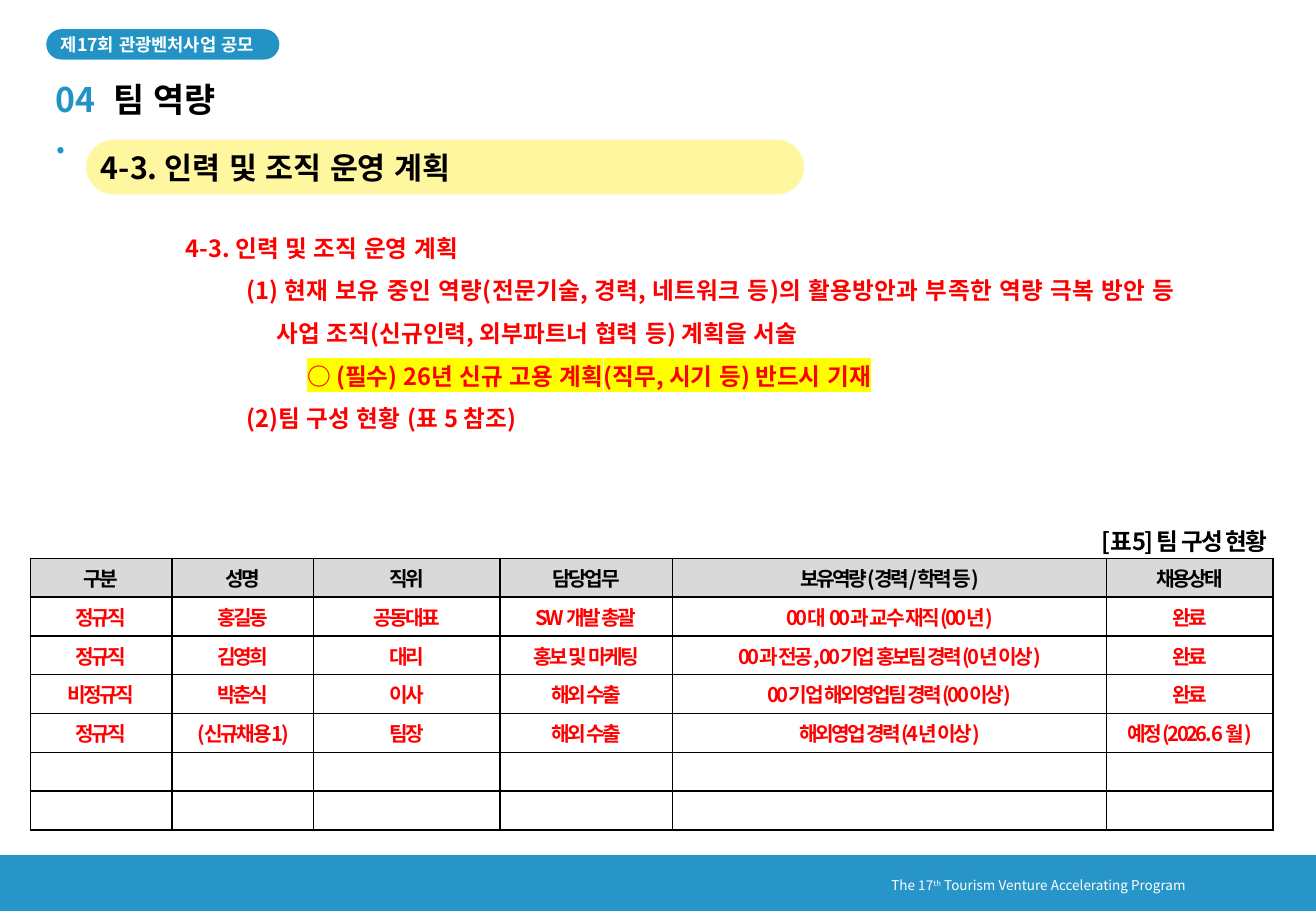
from lxml.etree import SubElement
from pptx import Presentation
from pptx.dml.color import RGBColor
from pptx.enum.lang import MSO_LANGUAGE_ID
from pptx.enum.shapes import MSO_SHAPE
from pptx.enum.text import MSO_ANCHOR, PP_ALIGN
from pptx.oxml.ns import qn
from pptx.util import Pt

FONT = "Noto Sans CJK KR"
BLUE, FOOTER_BLUE, PALE_YELLOW = "2393C5", "2795C7", "FFF7A0"
RED, BLACK, WHITE, GREY, YELLOW = "FF0000", "000000", "FFFFFF", "D9D9D9", "FFFF00"

PLAN = [
    (0, "4-3. 인력 및 조직 운영 계획", None),
    (1, "(1) 현재 보유 중인 역량(전문기술, 경력, 네트워크 등)의 활용방안과 부족한 역량 극복 방안 등 "
        "사업 조직(신규인력, 외부파트너 협력 등) 계획을 서술", None),
    (2, "○ (필수) 26년 신규 고용 계획(직무, 시기 등) 반드시 기재", YELLOW),
    (1, "(2)팀 구성 현황 (표 5 참조)", None),
]
COLUMN_WIDTHS = [84, 84, 110.5, 102, 257.5, 98.5]
TEAM = [
    ["구분", "성명", "직위", "담당업무", "보유역량(경력/학력 등)", "채용상태"],
    ["정규직", "홍길동", "공동대표", "SW 개발 총괄", "00대 00과 교수 재직(00년)", "완료"],
    ["정규직", "김영희", "대리", "홍보 및 마케팅", "00과 전공, 00기업 홍보팀 경력(0년 이상)", "완료"],
    ["비정규직", "박춘식", "이사", "해외 수출", "00기업 해외영업팀 경력(00이상)", "완료"],
    ["정규직", "(신규채용1)", "팀장", "해외 수출", "해외영업 경력(4년 이상)", "예정(2026. 6 월)"],
    [""] * 6,
    [""] * 6,
]


def color(value):
    return RGBColor.from_string(value)


def format_run(run, size, fill, bold=True, spacing=0, highlight=None):
    font = run.font
    font.size, font.bold, font.name = Pt(size), bold, FONT
    font.color.rgb = color(fill)
    font.language_id = MSO_LANGUAGE_ID.KOREAN
    properties = run._r.get_or_add_rPr()
    latin = properties.find(qn("a:latin"))
    east_asian = SubElement(properties, qn("a:ea"), typeface=FONT)
    latin.addnext(east_asian)
    if spacing:
        properties.set("spc", str(round(spacing * 100)))
    if highlight:
        mark = SubElement(properties, qn("a:highlight"))
        SubElement(mark, qn("a:srgbClr"), val=highlight)
        latin.addprevious(mark)


def set_margins(text_frame, left=0, right=0):
    text_frame.margin_left, text_frame.margin_right = Pt(left), Pt(right)
    text_frame.margin_top = text_frame.margin_bottom = 0


def add_text(slide, box, text, size, fill, align=PP_ALIGN.LEFT, inset=True, **style):
    text_frame = slide.shapes.add_textbox(*map(Pt, box)).text_frame
    text_frame.word_wrap = True
    if not inset:
        set_margins(text_frame)
    paragraph = text_frame.paragraphs[0]
    paragraph.text = text
    paragraph.alignment = align
    for run in paragraph.runs:
        format_run(run, size, fill, **style)
    return paragraph


def add_block(slide, kind, box, fill):
    shape = slide.shapes.add_shape(kind, *map(Pt, box))
    shape.shadow.inherit = False
    shape.fill.solid()
    shape.fill.fore_color.rgb = color(fill)
    shape.line.fill.background()
    return shape


def add_pill(slide, box, fill, text, size, text_color, align, left=0, right=0):
    shape = add_block(slide, MSO_SHAPE.ROUNDED_RECTANGLE, box, fill)
    shape.adjustments[0] = 0.5
    text_frame = shape.text_frame
    text_frame.word_wrap = True
    text_frame.vertical_anchor = MSO_ANCHOR.MIDDLE
    set_margins(text_frame, left, right)
    paragraph = text_frame.paragraphs[0]
    paragraph.text = text
    paragraph.alignment = align
    format_run(paragraph.runs[0], size, text_color)


def add_footer(slide, left, top, width, height):
    add_block(slide, MSO_SHAPE.RECTANGLE, (left, top, width, height), FOOTER_BLUE)
    paragraph = add_text(slide, (left + 521.3, top + 9.3, 224, 17.3), "The 17", 8, WHITE, bold=False)
    for text in ("th", " Tourism Venture Accelerating Program"):
        run = paragraph.add_run()
        run.text = text
        format_run(run, 8, WHITE, bold=False)
    paragraph.runs[1]._r.get_or_add_rPr().set("baseline", "30000")


def add_header(slide, left, top):
    add_pill(slide, (left, top, 138.2, 18), BLUE, "제17회 관광벤처사업 공모", 10.5, WHITE,
             PP_ALIGN.CENTER, right=6.5)
    add_text(slide, (left + 5.7, top + 29.5, 25.2, 24.5), "04.", 20, BLUE, inset=False)
    add_text(slide, (left + 39.6, top + 29.5, 309.6, 24.5), "팀 역량", 20, BLACK, inset=False)
    add_pill(slide, (left + 23.7, top + 65.5, 425.5, 32.4), PALE_YELLOW,
             "4-3. 인력 및 조직 운영 계획", 18, BLACK, PP_ALIGN.LEFT, left=4)


def add_plan(slide, box):
    text_frame = slide.shapes.add_textbox(*map(Pt, box)).text_frame
    text_frame.word_wrap = True
    for index, (level, text, highlight) in enumerate(PLAN):
        paragraph = text_frame.add_paragraph() if index else text_frame.paragraphs[0]
        paragraph.text = text
        paragraph.level = level
        paragraph.alignment = PP_ALIGN.JUSTIFY
        paragraph.line_spacing = 1.5
        properties = paragraph._p.get_or_add_pPr()
        properties.set("marL", str(Pt(18 + 36 * level)))
        properties.set("indent", str(Pt(-18)))
        format_run(paragraph.runs[0], 14, RED, highlight=highlight)


def format_cell(cell, text, text_color, fill):
    cell.margin_top = cell.margin_bottom = 0
    cell.vertical_anchor = MSO_ANCHOR.MIDDLE
    properties = cell._tc.get_or_add_tcPr()
    for side in ("lnL", "lnR", "lnT", "lnB"):
        line = SubElement(properties, qn("a:" + side), w=str(Pt(1)))
        line_fill = SubElement(line, qn("a:solidFill"))
        SubElement(line_fill, qn("a:srgbClr"), val=BLACK)
    cell.fill.solid()
    cell.fill.fore_color.rgb = color(fill)
    paragraph = cell.text_frame.paragraphs[0]
    paragraph.alignment = PP_ALIGN.CENTER
    if text:
        paragraph.text = text
        format_run(paragraph.runs[0], 12, text_color, spacing=-1.5)
    else:
        SubElement(paragraph._p, qn("a:endParaRPr"), sz="1200")


def add_team(slide, left, top, row_height):
    width = sum(COLUMN_WIDTHS)
    add_text(slide, (left + 3.6, top - 22.3, width, 24.5), "[표5] 팀 구성 현황", 14, BLACK,
             PP_ALIGN.RIGHT, spacing=-1.2)
    box = (left, top, width, row_height * len(TEAM))
    table = slide.shapes.add_table(len(TEAM), len(COLUMN_WIDTHS), *map(Pt, box)).table
    table.horz_banding = False
    for column, column_width in zip(table.columns, COLUMN_WIDTHS):
        column.width = Pt(column_width)
    for row_index, texts in enumerate(TEAM):
        table.rows[row_index].height = Pt(row_height)
        text_color, fill = (RED, WHITE) if row_index else (BLACK, GREY)
        for column_index, text in enumerate(texts):
            format_cell(table.cell(row_index, column_index), text, text_color, fill)


def main():
    presentation = Presentation()
    presentation.slide_width, presentation.slide_height = Pt(780), Pt(540)
    slide = presentation.slides.add_slide(presentation.slide_layouts[6])
    add_footer(slide, 0, 506.9, 780, 33.1)
    add_header(slide, 27.4, 17.3)
    add_plan(slide, (103, 126.7, 600.5, 160))
    add_team(slide, 18, 331, 23)
    presentation.save("out.pptx")


if __name__ == "__main__":
    main()
